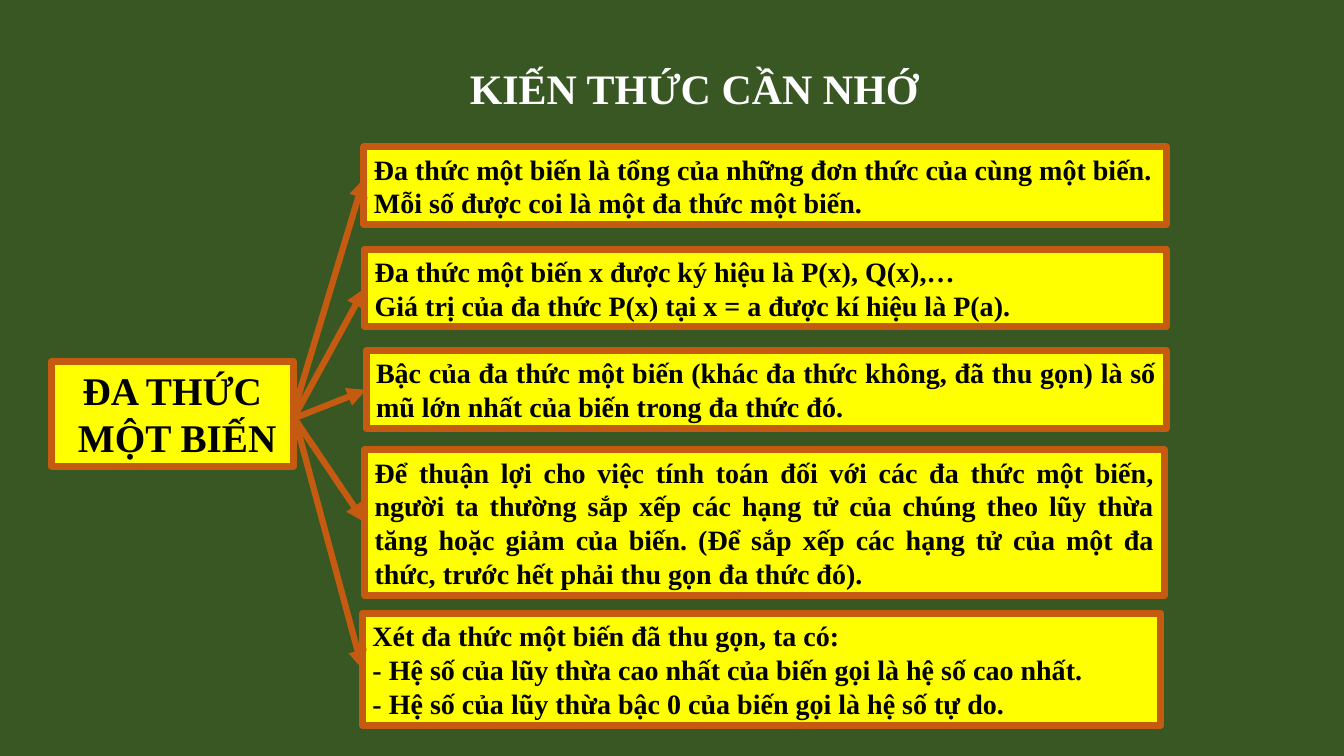
from lxml import etree
from pptx import Presentation
from pptx.dml.color import RGBColor
from pptx.enum.shapes import MSO_CONNECTOR, MSO_SHAPE
from pptx.enum.text import MSO_ANCHOR, MSO_AUTO_SIZE, PP_ALIGN
from pptx.oxml.ns import qn
from pptx.util import Pt

RECTANGLE = MSO_SHAPE.RECTANGLE
STRAIGHT = MSO_CONNECTOR.STRAIGHT
MIDDLE = MSO_ANCHOR.MIDDLE
CENTER, JUSTIFY = PP_ALIGN.CENTER, PP_ALIGN.JUSTIFY
FIT_SHAPE, NO_FIT = MSO_AUTO_SIZE.SHAPE_TO_FIT_TEXT, MSO_AUTO_SIZE.NONE

COLORS = {"board": "385723", "card": "FFFF00", "edge": "C55A11",
          "ink": "000000", "heading": "FFFFFF"}
FONT = "Times New Roman"
TITLE_ONLY = 5


class MindMap:
    """Holds the style and the current slide."""

    def __init__(self, slide):
        self.slide = slide
        background = slide.background.fill
        background.solid()
        background.fore_color.rgb = self.color("board")

    def color(self, key):
        return RGBColor.from_string(COLORS[key])

    def add_lines(self, frame, lines, size, key, align):
        frame.vertical_anchor = MIDDLE
        for index, line in enumerate(lines):
            paragraph = frame.paragraphs[0] if index == 0 else frame.add_paragraph()
            paragraph.alignment = align
            run = paragraph.add_run()
            run.text = line
            font = run.font
            font.name, font.size, font.bold = FONT, Pt(size), True
            font.color.rgb = self.color(key)

    def title(self, text, left, top, width, height):
        heading = self.slide.shapes.title
        heading.left, heading.top = Pt(left), Pt(top)
        heading.width, heading.height = Pt(width), Pt(height)
        frame = heading.text_frame
        frame.word_wrap = False
        frame.auto_size = NO_FIT
        self.add_lines(frame, [text], 30, "heading", CENTER)

    def card(self, lines, left, top, width, height, size=20, align=JUSTIFY):
        card = self.slide.shapes.add_shape(
            RECTANGLE, Pt(left), Pt(top), Pt(width), Pt(height))
        card.shadow.inherit = False
        card.fill.solid()
        card.fill.fore_color.rgb = self.color("card")
        card.line.color.rgb = self.color("edge")
        card.line.width = Pt(5)
        card.text_frame.word_wrap = True
        card.text_frame.auto_size = FIT_SHAPE
        self.add_lines(card.text_frame, lines, size, "ink", align)

    def arrow(self, x1, y1, x2, y2):
        arrow = self.slide.shapes.add_connector(
            STRAIGHT, Pt(x1), Pt(y1), Pt(x2), Pt(y2))
        arrow.line.color.rgb = self.color("edge")
        arrow.line.width = Pt(4.5)
        properties = arrow._element.spPr
        etree.SubElement(properties.find(qn("a:ln")), qn("a:tailEnd"), type="triangle")
        etree.SubElement(properties, qn("a:effectLst"))


# Facts: lines, (left, top, width, height), arrow start y, arrow end y
FACTS = [
    (["Đa thức một biến là tổng của những đơn thức của cùng một biến.",
      "Mỗi số được coi là một đa thức một biến."],
     (260, 105, 573, 55.5), 295, 127.5),
    (["Đa thức một biến x được ký hiệu là P(x), Q(x),…",
      "Giá trị của đa thức P(x) tại x = a được kí hiệu là P(a)."],
     (260.5, 178, 572.5, 55.5), 299, 206),
    (["Bậc của đa thức một biến (khác đa thức không, đã thu gọn) là số mũ "
      "lớn nhất của biến trong đa thức đó."],
     (261.5, 250.5, 571.5, 55.5), 299, 278.5),
    (["Để thuận lợi cho việc tính toán đối với các đa thức một biến, người ta "
      "thường sắp xếp các hạng tử của chúng theo lũy thừa tăng hoặc giảm của "
      "biến. (Để sắp xếp các hạng tử của một đa thức, trước hết phải thu gọn "
      "đa thức đó)."],
     (260.5, 321, 571, 104.5), 297.5, 373),
    (["Xét đa thức một biến đã thu gọn, ta có:",
      "- Hệ số của lũy thừa cao nhất của biến gọi là hệ số cao nhất.",
      "- Hệ số của lũy thừa bậc 0 của biến gọi là hệ số tự do."],
     (259, 438, 570, 80), 295, 478),
]
TOPIC_LEFT, TOPIC_WIDTH = 36.5, 173


def main():
    deck = Presentation()
    deck.slide_width, deck.slide_height = Pt(960), Pt(540)
    board = MindMap(deck.slides.add_slide(deck.slide_layouts[TITLE_ONLY]))

    # Heading
    board.title("KIẾN THỨC CẦN NHỚ", 327, 41, 338, 44)

    # Fact cards and the topic they branch from
    for lines, frame, _, _ in FACTS:
        board.card(lines, *frame)
    board.card(["ĐA THỨC", " MỘT BIẾN"], TOPIC_LEFT, 258, TOPIC_WIDTH, 75,
               size=28, align=CENTER)

    # Arrows from the topic to each fact
    for _, frame, start_y, end_y in FACTS:
        board.arrow(TOPIC_LEFT + TOPIC_WIDTH, start_y, frame[0], end_y)

    deck.save("out.pptx")


if __name__ == "__main__":
    main()
